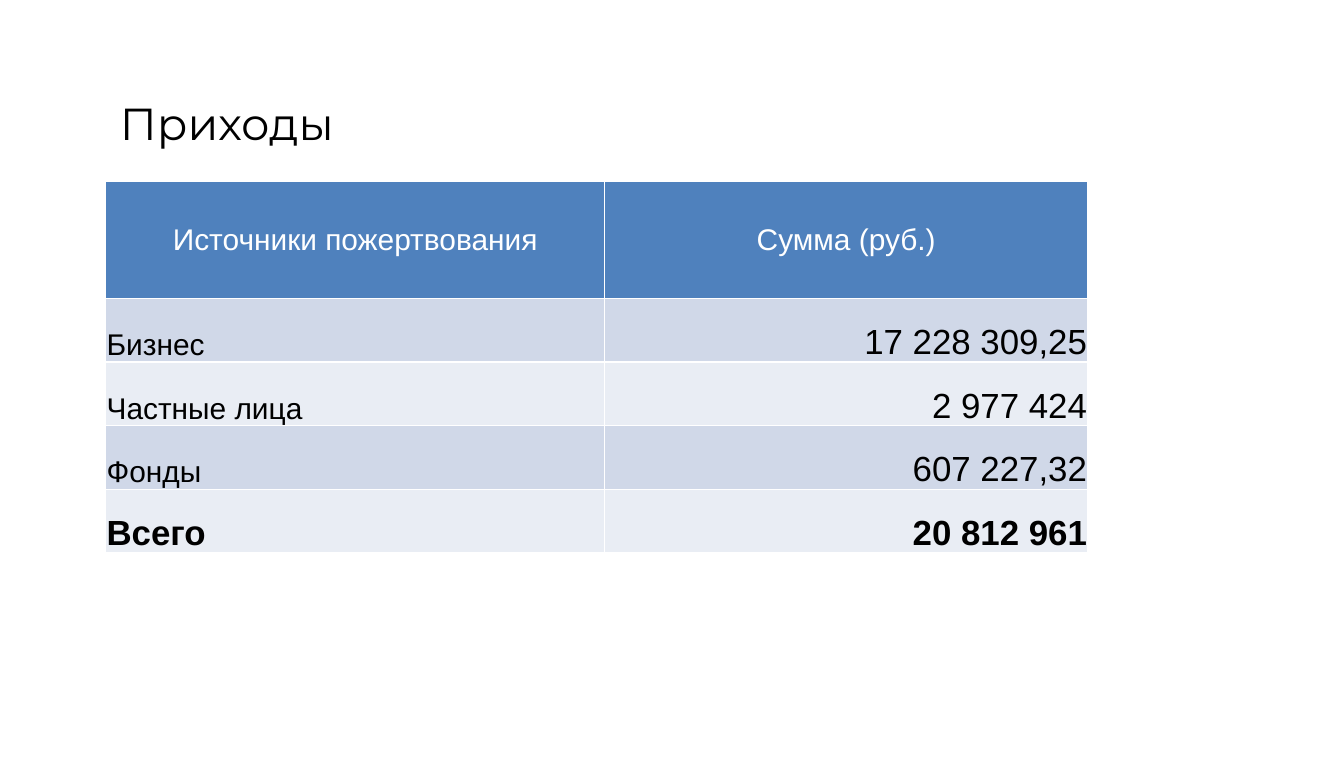
from pptx import Presentation
from pptx.dml.color import RGBColor
from pptx.enum.text import MSO_ANCHOR, MSO_AUTO_SIZE, PP_ALIGN
from pptx.util import Inches, Pt

TITLE = "Приходы"
HEADER = ("Источники пожертвования", "Сумма (руб.)")
INCOME = [
    ("Бизнес", "17 228 309,25"),
    ("Частные лица", "2 977 424"),
    ("Фонды", "607 227,32"),
]
TOTAL = ("Всего", "20 812 961")

COLORS = {
    "text": "000000",
    "header_text": "FFFFFF",
    "header": "4F81BD",
    "odd_row": "D0D8E8",
    "even_row": "E9EDF4",
}
COLUMN_WIDTHS = (5.57, 5.39)
HEADER_HEIGHT, ROW_HEIGHT = 1.31, 0.71
LABEL_SIZE, AMOUNT_SIZE = 24, 28


def color(name):
    return RGBColor.from_string(COLORS[name])


def style_font(paragraph, face, size, color_name, bold=False):
    font = paragraph.font if not paragraph.runs else paragraph.runs[0].font
    font.name = face
    font.size = Pt(size)
    font.bold = bold
    font.color.rgb = color(color_name)


def fill_cell(cell, text, fill, text_color, size, align, anchor, bold=False):
    cell.margin_left = cell.margin_top = cell.margin_right = Inches(0.01)
    cell.margin_bottom = 0
    cell.vertical_anchor = anchor
    cell.fill.solid()
    cell.fill.fore_color.rgb = color(fill)
    paragraph = cell.text_frame.paragraphs[0]
    paragraph.text = text
    paragraph.alignment = align
    style_font(paragraph, "Arial", size, text_color, bold)


def add_title(slide):
    title = slide.shapes.add_textbox(Inches(1.24), Inches(1.02), Inches(3.38), Inches(0.71))
    frame = title.text_frame
    frame.word_wrap = True
    frame.auto_size = MSO_AUTO_SIZE.SHAPE_TO_FIT_TEXT
    frame.text = TITLE
    style_font(frame.paragraphs[0], "Montserrat", 36, "text")


def add_income_table(slide):
    body = INCOME + [TOTAL]
    height = HEADER_HEIGHT + ROW_HEIGHT * len(body)
    table = slide.shapes.add_table(
        len(body) + 1, len(HEADER), Inches(1.18), Inches(2.02),
        Inches(sum(COLUMN_WIDTHS)), Inches(height),
    ).table
    for column, width in zip(table.columns, COLUMN_WIDTHS):
        column.width = Inches(width)
    for index, row in enumerate(table.rows):
        row.height = Inches(ROW_HEIGHT if index else HEADER_HEIGHT)

    for col, heading in enumerate(HEADER):
        fill_cell(table.cell(0, col), heading, "header", "header_text",
                  LABEL_SIZE, PP_ALIGN.CENTER, MSO_ANCHOR.MIDDLE)
    for row, (source, amount) in enumerate(body, start=1):
        is_total = row == len(body)
        fill = "odd_row" if row % 2 else "even_row"
        label_size = AMOUNT_SIZE if is_total else LABEL_SIZE
        fill_cell(table.cell(row, 0), source, fill, "text", label_size,
                  PP_ALIGN.LEFT, MSO_ANCHOR.BOTTOM, is_total)
        fill_cell(table.cell(row, 1), amount, fill, "text", AMOUNT_SIZE,
                  PP_ALIGN.RIGHT, MSO_ANCHOR.BOTTOM, is_total)


def main():
    presentation = Presentation()
    presentation.slide_width = Inches(15)
    presentation.slide_height = Inches(8.66)
    slide = presentation.slides.add_slide(presentation.slide_layouts[6])
    add_title(slide)
    add_income_table(slide)
    presentation.save("out.pptx")


if __name__ == "__main__":
    main()
